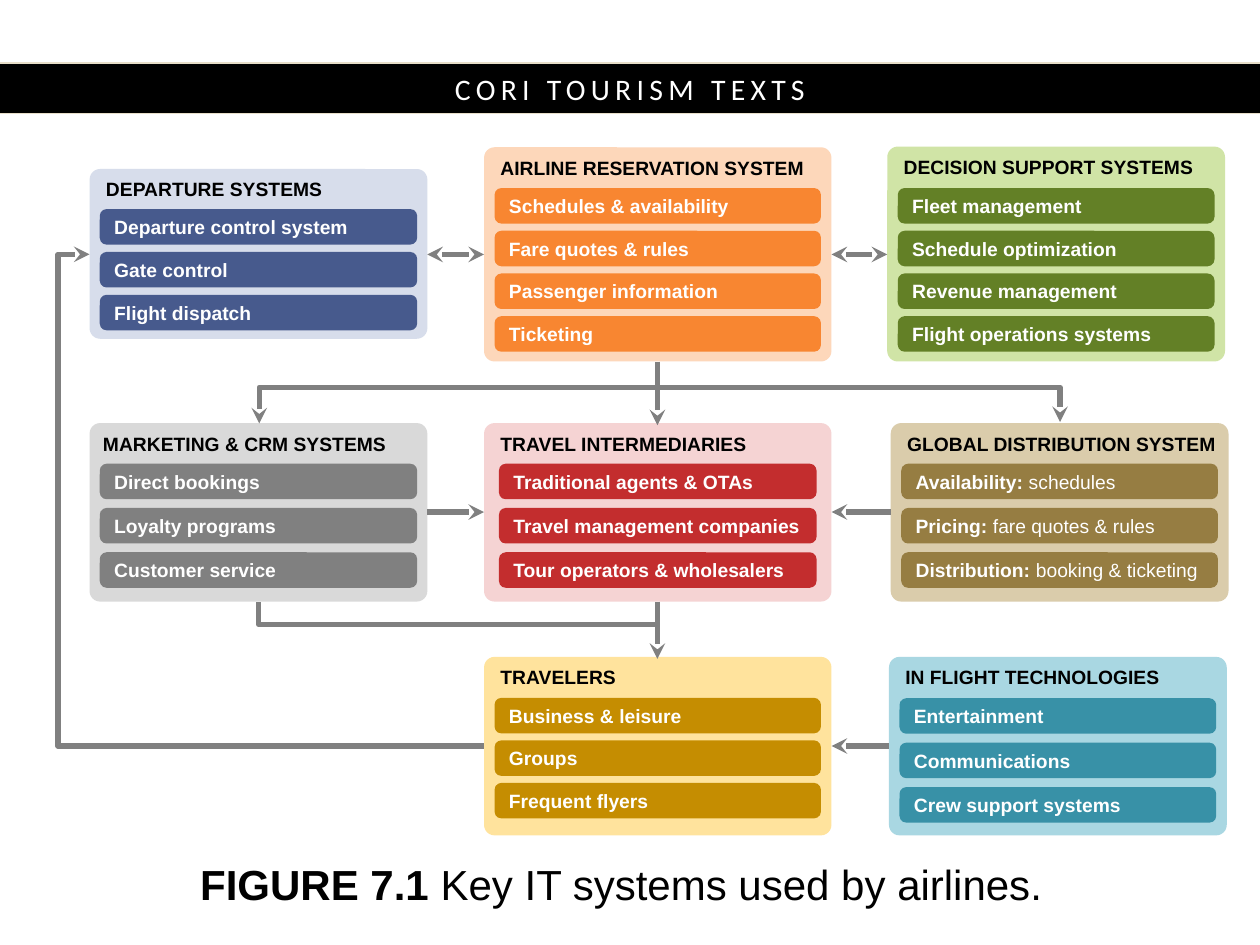
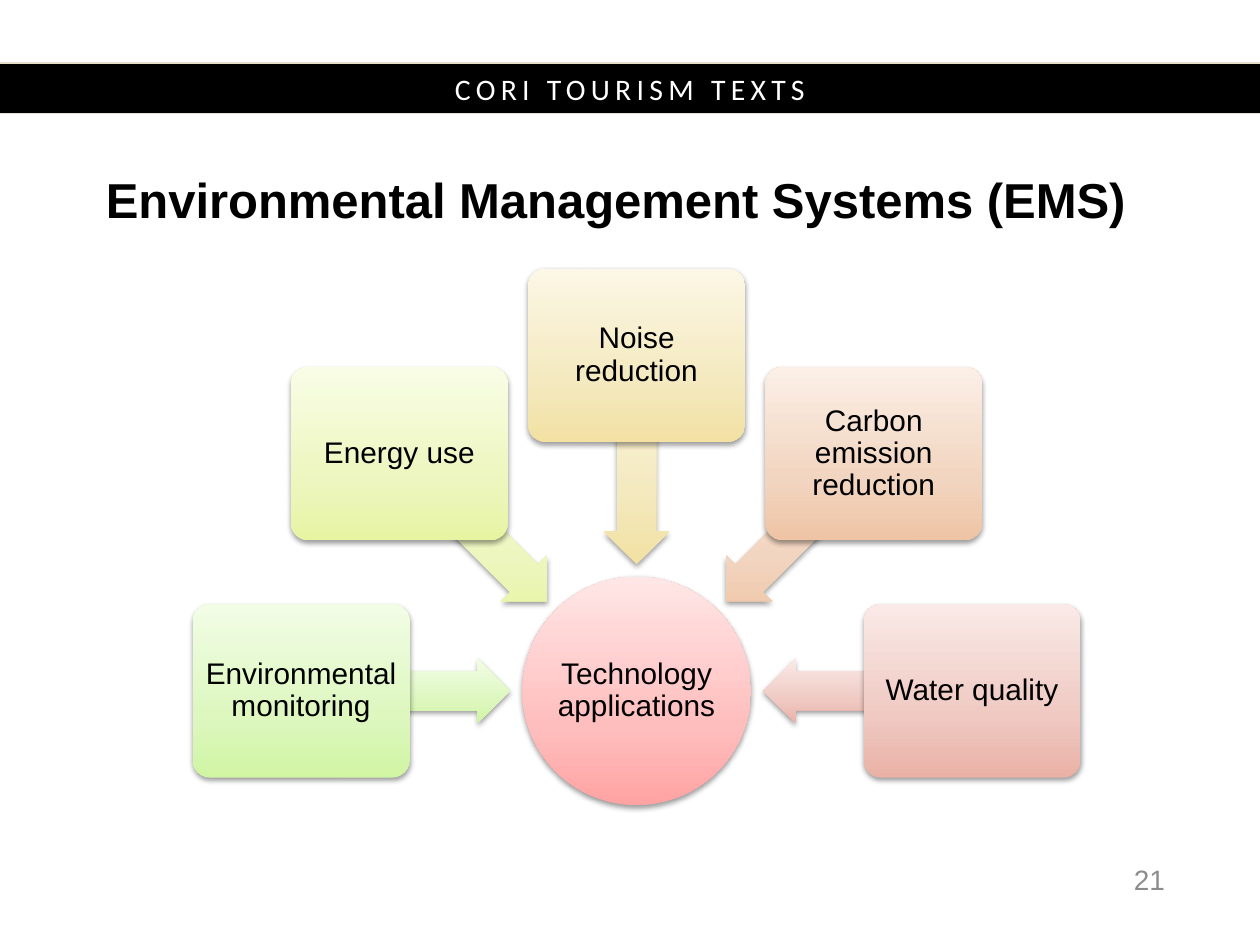
from math import cos, radians, sin

from pptx import Presentation
from pptx import util as u
from pptx.dml.color import RGBColor
from pptx.enum import shapes, text
from pptx.oxml import parse_xml
from pptx.oxml.ns import nsdecls, qn

Pt = u.Pt
ALIGN = text.PP_ALIGN
KIND = shapes.MSO_SHAPE

COLORS = {"black": "000000", "white": "FFFFFF", "band_edge": "E7DEC9",
          "connector": "808080", "page_number": "8C8C8C"}
BAND_TEXT = "CORI TOURISM TEXTS"

# Slide 1: heading, (panel colour, bar colour), (left, top, width, height),
# top of first bar, distance between bars, side margin of bars, bar labels
PANELS = [
    ("DEPARTURE SYSTEMS", ("D7DDEB", "475A8D"), (51.2, 96.6, 193, 97), 119.5, 24.5, 5.8,
     ["Departure control system", "Gate control", "Flight dispatch"]),
    ("AIRLINE RESERVATION SYSTEM", ("FDD7BA", "F88631"), (276.6, 84.2, 198.5, 122.4), 107.5, 24.4, 6,
     ["Schedules & availability", "Fare quotes & rules", "Passenger information", "Ticketing"]),
    ("DECISION SUPPORT SYSTEMS", ("D0E4A6", "638026"), (507, 83.8, 193, 122.8), 107.5, 24.4, 6,
     ["Fleet management", "Schedule optimization", "Revenue management",
      "Flight operations systems"]),
    ("MARKETING & CRM SYSTEMS", ("D9D9D9", "808080"), (51.2, 241.8, 193, 102), 265, 25.3, 5.8,
     ["Direct bookings", "Loyalty programs", "Customer service"]),
    ("TRAVEL INTERMEDIARIES", ("F5D3D3", "C32D2E"), (276.6, 241.8, 198.5, 102), 265, 25.3, 8.5,
     ["Traditional agents & OTAs", "Travel management companies", "Tour operators & wholesalers"]),
    ("GLOBAL DISTRIBUTION SYSTEM", ("DACCAB", "967D42"), (509, 241.8, 193, 102), 265, 25.3, 6,
     [("Availability: ", "schedules"), ("Pricing: ", "fare quotes & rules"),
      ("Distribution: ", "booking & ticketing")]),
    ("TRAVELERS", ("FFE39D", "C58D01"), (276.6, 375.4, 198.5, 102), 398.8, 24.3, 6,
     ["Business & leisure", "Groups", "Frequent flyers"]),
    ("IN FLIGHT TECHNOLOGIES", ("A9D7E2", "3891A7"), (508, 375.4, 193, 102), 399, 25.4, 6,
     ["Entertainment", "Communications", "Crew support systems"]),
]
BAR_HEIGHT = 20.3
CORNER = 6

# Start x, start y, end x, end y, arrowheads
STRAIGHT_LINES = [
    (375.7, 206.6, 375.7, 243, "tail"),
    (375.7, 343.8, 375.7, 376.5, "tail"),
    (507, 145.4, 475.2, 145.4, "both"),
    (244.2, 145.4, 276.6, 145.4, "both"),
    (244.2, 292.6, 276.6, 292.6, "tail"),
    (509, 292.6, 475.2, 292.6, "tail"),
    (508, 426.3, 475.2, 426.3, "tail"),
]
CORNER_LINES = [
    (375.7, 221.3, 148.2, 242, "tail"),
    (375.7, 221.3, 605.8, 241.2, "tail"),
    (375.7, 356.7, 147.7, 343.8, None),
]
RETURN_LINE = (276.6, 426.3, 51.2, 145.4, "tail")
CAPTION = ("FIGURE 7.1 ", "Key IT systems used by airlines.")

# Slide 2: topics clockwise from the left, with gradient stops at 0, 35 and 100 %
EMS_TITLE = "Environmental Management Systems (EMS)"
HUB = ("Technology applications", ("FFA3A3", "FFBEBE", "FFE6E6"))
TOPICS = [
    ("Environmental monitoring", ("D0F5A3", "DDF7BF", "F2FDE6")),
    ("Energy use", ("E7F4A2", "EDF6BF", "F9FDE6")),
    ("Noise reduction", ("F2E1A3", "F4E9BF", "FCF7E6")),
    ("Carbon emission reduction", ("EEC4A4", "F2D5C0", "FBEFE6")),
    ("Water quality", ("EAB1A6", "EFC9C2", "FAEAE7")),
]
HUB_CENTER = (363.8, 394.8)
HUB_SIZE = 130.6
CARD_RADIUS, CARD_SIZE = 191.7, (124, 99.2)
ARROW_RADIUS, ARROW_SIZE = 132, (119.3, 37.3)
PAGE_NUMBER = "21"


def rgb(value):
    return RGBColor.from_string(value)


def write(box, content, size=11, color="black", bold=True, font="Arial", align=ALIGN.LEFT,
          anchor=text.MSO_ANCHOR.MIDDLE, wrap=True, line_spacing=None, margin=None, tracking=None):
    """Fill a box with text; a tuple holds a bold lead and a regular rest."""
    frame = box.text_frame
    frame.auto_size = text.MSO_AUTO_SIZE.NONE
    frame.word_wrap = wrap
    frame.vertical_anchor = anchor
    if margin is not None:
        frame.margin_left = frame.margin_right = Pt(margin)
        frame.margin_top = frame.margin_bottom = Pt(margin)
    para = frame.paragraphs[0]
    para.alignment = align
    if line_spacing:
        para.line_spacing = line_spacing
    spans = zip(content, (True, False)) if isinstance(content, tuple) else [(content, bold)]
    for words, is_bold in spans:
        span = para.add_run()
        span.text = words
        span.font.size, span.font.bold, span.font.name = Pt(size), is_bold, font
        span.font.color.rgb = rgb(COLORS[color])
        if tracking:
            span.font._element.set("spc", str(tracking * 100))


def add_box(page, kind, left, top, width, height, fill=None, radius=None):
    box = page.shapes.add_shape(kind, Pt(left), Pt(top), Pt(width), Pt(height))
    box.shadow.inherit = False
    box.line.fill.background()
    if fill:
        box.fill.solid()
        box.fill.fore_color.rgb = rgb(fill)
    if radius:
        box.adjustments[0] = radius / min(width, height)
    return box


def add_glossy(page, kind, center, size, stops, radius=None):
    """Add a shape with a vertical gradient and a soft shadow, placed by its centre."""
    width, height = size
    box = add_box(page, kind, center[0] - width / 2, center[1] - height / 2, width, height,
                  radius=radius)
    stop_xml = "".join(f'<a:gs pos="{at}000"><a:srgbClr val="{color}"/></a:gs>'
                       for at, color in zip((0, 35, 100), stops))
    properties = box.element.spPr
    properties.find(qn("a:prstGeom")).addnext(parse_xml(
        f'<a:gradFill rotWithShape="0" {nsdecls("a")}><a:gsLst>{stop_xml}</a:gsLst>'
        '<a:lin ang="16200000" scaled="0"/></a:gradFill>'))
    properties.find(qn("a:effectLst")).append(parse_xml(
        f'<a:outerShdw blurRad="40000" dist="20000" dir="5400000" rotWithShape="0" {nsdecls("a")}>'
        '<a:srgbClr val="000000"><a:alpha val="38000"/></a:srgbClr></a:outerShdw>'))
    return box


def add_line(page, x1, y1, x2, y2, heads, preset="line", bend=None):
    kind = shapes.MSO_CONNECTOR.STRAIGHT if preset == "line" else shapes.MSO_CONNECTOR.ELBOW
    line = page.shapes.add_connector(kind, Pt(x1), Pt(y1), Pt(x2), Pt(y2))
    line.line.color.rgb = rgb(COLORS["connector"])
    line.line.width = Pt(3)
    properties = line.element.spPr
    geometry = properties.find(qn("a:prstGeom"))
    geometry.set("prst", preset)
    if bend is not None:
        geometry.find(qn("a:avLst")).append(parse_xml(
            f'<a:gd name="adj1" fmla="val {round(bend * 100000)}" {nsdecls("a")}/>'))
    ends = {"both": ("headEnd", "tailEnd"), "tail": ("tailEnd",), None: ()}[heads]
    for end in ends:
        properties.find(qn("a:ln")).append(parse_xml(f'<a:{end} type="stealth" {nsdecls("a")}/>'))
    properties.append(parse_xml(f'<a:effectLst {nsdecls("a")}/>'))


def set_title(page, content, left, top, **style):
    title = page.shapes.title
    title.left, title.top, title.width, title.height = Pt(left), Pt(top), Pt(616.3), Pt(34.6)
    write(title, content, line_spacing=Pt(32), **style)


def add_band(page, layout):
    """Build the header band and move it to the layout that all slides share."""
    band = add_box(page, KIND.RECTANGLE, -6, 36, 732, 29, COLORS["black"])
    band.line.color.rgb = rgb(COLORS["band_edge"])
    band.line.width = Pt(0.75)
    write(band, BAND_TEXT, size=17, color="white", bold=False, font="Calibri",
          align=ALIGN.CENTER, tracking=3)
    layout.shapes._spTree.append(band.element)


def add_panel(page, heading, colors, place, first_bar, pitch, margin, labels):
    left, top, width, height = place
    add_box(page, KIND.ROUNDED_RECTANGLE, *place, colors[0], CORNER)
    indent = 0.6 if heading.startswith("MARKETING") else 2.3
    box = page.shapes.add_textbox(Pt(left + indent), Pt(top + 1.4), Pt(width - 4), Pt(20.6))
    write(box, heading, wrap=False, anchor=text.MSO_ANCHOR.TOP)
    for row, label in enumerate(labels):
        bar = add_box(page, KIND.ROUNDED_RECTANGLE, left + margin, first_bar + row * pitch,
                      width - 2 * margin, BAR_HEIGHT, colors[1], 3.9)
        write(bar, label, color="white", wrap=False)


def build_systems(page):
    for panel in PANELS:
        add_panel(page, *panel)
    for line in STRAIGHT_LINES:
        add_line(page, *line)
    for line in CORNER_LINES:
        add_line(page, *line, preset="bentConnector2")
    add_line(page, *RETURN_LINE, preset="bentConnector3", bend=1.08)
    set_title(page, CAPTION, 46.8, 486, size=24, align=ALIGN.CENTER)


def build_ems(page):
    set_title(page, EMS_TITLE, 53.3, 97.2, size=28)
    label = {"size": 17, "bold": False, "align": ALIGN.CENTER, "line_spacing": 0.9}

    # Hub
    hub = add_glossy(page, KIND.OVAL, HUB_CENTER, (HUB_SIZE, HUB_SIZE), HUB[1])
    write(hub, HUB[0], margin=0.7, **label)

    # Topics on a half circle, each with an arrow to the hub
    for index, (topic, stops) in enumerate(TOPICS):
        angle = 180 + index * 180 / (len(TOPICS) - 1)

        def spot(radius):
            return (HUB_CENTER[0] + radius * cos(radians(angle)),
                    HUB_CENTER[1] + radius * sin(radians(angle)))

        arrow = add_glossy(page, KIND.LEFT_ARROW, spot(ARROW_RADIUS), ARROW_SIZE, stops)
        arrow.adjustments[0], arrow.adjustments[1] = 0.6, 0.5
        arrow.rotation = angle % 360
        card = add_glossy(page, KIND.ROUNDED_RECTANGLE, spot(CARD_RADIUS), CARD_SIZE, stops, 9.9)
        write(card, topic, margin=3, **label)

    # Page number
    number = page.shapes.add_textbox(Pt(504.7), Pt(488.2), Pt(168), Pt(28.8))
    write(number, PAGE_NUMBER, size=16, color="page_number", bold=False, align=ALIGN.RIGHT)


def main():
    deck = Presentation()
    deck.slide_width, deck.slide_height = Pt(720), Pt(540)
    layout = deck.slide_layouts[5]
    pages = [deck.slides.add_slide(layout) for _ in range(2)]
    add_band(pages[0], layout)
    build_systems(pages[0])
    build_ems(pages[1])
    deck.save("out.pptx")


if __name__ == "__main__":
    main()
